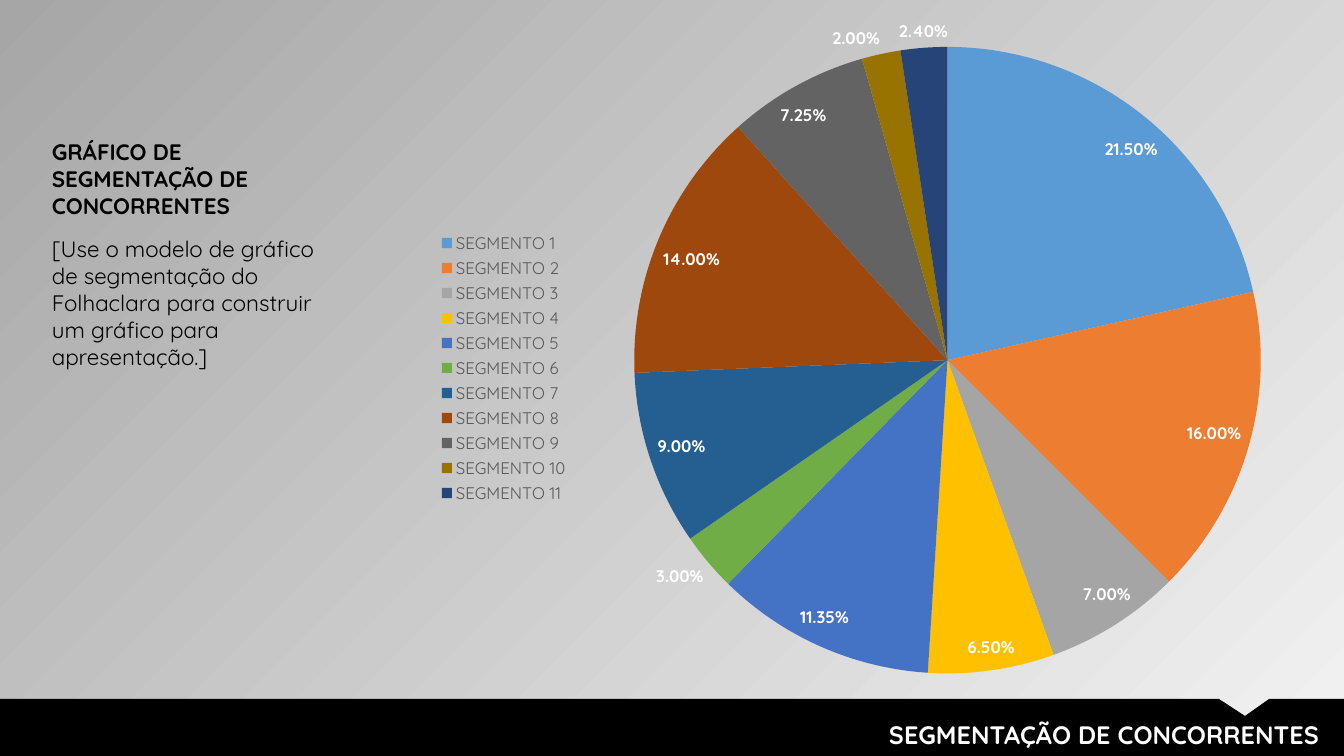
from lxml import etree
from pptx import Presentation
from pptx.chart.data import CategoryChartData
from pptx.dml.color import RGBColor
from pptx.enum.chart import XL_CHART_TYPE as ChartType, XL_LABEL_POSITION as LabelPos
from pptx.enum.chart import XL_LEGEND_POSITION as LegendPos
from pptx.enum.text import MSO_ANCHOR as Anchor, MSO_AUTO_SIZE as AutoSize, PP_ALIGN as Align
from pptx.oxml.ns import qn
from pptx.util import Pt

SLIDE_W, SLIDE_H = 1344, 756
EMU_PER_PX = 12192000 / SLIDE_W
FONT = "Quicksand"
COLORS = {
    "light": "F2F2F2", "mid": "A6A6A6", "black": "000000",
    "white": "FFFFFF", "legend": "595959",
}
SEGMENTS = [  # share, colour
    (0.215, "5B9BD5"), (0.16, "ED7D31"), (0.07, "A5A5A5"), (0.065, "FFC000"),
    (0.1135, "4472C4"), (0.03, "70AD47"), (0.09, "255E91"), (0.14, "9E480E"),
    (0.0725, "636363"), (0.02, "997300"), (0.024, "264478"),
]
PLOT_AREA = {"x": 0.244, "y": 0.065, "w": 0.749, "h": 0.849}


def px(length):
    return round(length * EMU_PER_PX)


def rgb(name):
    return RGBColor.from_string(COLORS[name])


def style_font(font, size, color, bold=False):
    font.name, font.size, font.bold = FONT, Pt(size), bold
    font.color.rgb = rgb(color)


def write(paragraph, text, *, size, color, bold=False, align=Align.LEFT, after=0):
    run = paragraph.add_run()
    run.text = text
    style_font(run.font, size, color, bold)
    paragraph.alignment = align
    paragraph.line_spacing = 1.0
    paragraph.space_before, paragraph.space_after = Pt(0), Pt(after)


def paint_background(slide):
    fill = slide.background.fill
    fill.gradient()
    fill.gradient_angle = 135
    for stop, name in zip(fill.gradient_stops, ("light", "mid")):
        stop.color.rgb = rgb(name)


def add_banner(slide, left, top, width, height):
    # Black band with a notch in its upper edge
    right, bottom = left + width, top + height
    outline = slide.shapes.build_freeform(left, top, scale=EMU_PER_PX)
    outline.add_line_segments([
        (right - 125, top), (right - 99, top + 17), (right - 75, top),
        (right, top), (right, bottom), (left, bottom),
    ])
    band = outline.convert_to_shape()
    band.shadow.inherit = False
    band.fill.solid()
    band.fill.fore_color.rgb = rgb("black")
    band.line.fill.background()

    # Slide title, brought in front of the band
    title = slide.shapes.title
    title.left, title.top = px(right - 698), px(top + 15)
    title.width, title.height = px(683), px(40)
    frame = title.text_frame
    frame.vertical_anchor, frame.auto_size = Anchor.TOP, AutoSize.NONE
    write(frame.paragraphs[0], "SEGMENTAÇÃO DE CONCORRENTES",
          size=18, color="white", bold=True, align=Align.RIGHT)
    slide.shapes._spTree.append(title._element)


def set_plot_area(chart, box):
    plot_area = chart._chartSpace.chart.plotArea
    for previous in plot_area.findall(qn("c:layout")):
        plot_area.remove(previous)
    layout = etree.Element(qn("c:layout"))
    manual = etree.SubElement(layout, qn("c:manualLayout"))
    settings = {"layoutTarget": "inner", "xMode": "edge", "yMode": "edge", **box}
    for tag, value in settings.items():
        etree.SubElement(manual, qn(f"c:{tag}")).set("val", str(value))
    plot_area.insert(0, layout)


def add_segment_chart(slide, left, top, width, height):
    shares = CategoryChartData(number_format="0.00%")
    shares.categories = [f"SEGMENTO {n}" for n in range(1, len(SEGMENTS) + 1)]
    shares.add_series("Series 1", [share for share, _ in SEGMENTS])
    chart = slide.shapes.add_chart(
        ChartType.PIE, px(left), px(top), px(width), px(height), shares).chart
    chart.has_title = False
    style_font(chart.font, 12, "black")
    set_plot_area(chart, PLOT_AREA)

    chart.has_legend = True
    chart.legend.position = LegendPos.LEFT
    chart.legend.include_in_layout = False
    style_font(chart.legend.font, 12, "legend")

    pie = chart.plots[0]
    pie.vary_by_categories = True
    for index, (_, color) in enumerate(SEGMENTS):
        slice_format = pie.series[0].points[index].format
        slice_format.fill.solid()
        slice_format.fill.fore_color.rgb = RGBColor.from_string(color)
        slice_format.line.fill.background()

    labels = pie.series[0].data_labels
    labels.show_value = True
    labels.show_percentage = False
    labels.number_format, labels.number_format_is_linked = "0.00%", False
    labels.position = LabelPos.BEST_FIT
    style_font(labels.font, 12, "white", bold=True)


def add_description(slide, left, top, width, height):
    frame = slide.shapes.add_textbox(px(left), px(top), px(width), px(height)).text_frame
    frame.word_wrap = True
    frame.vertical_anchor = Anchor.TOP
    frame.margin_top = px(3)
    write(frame.paragraphs[0], "GRÁFICO DE SEGMENTAÇÃO DE CONCORRENTES",
          size=16, color="black", bold=True, after=12)
    write(frame.add_paragraph(),
          "[Use o modelo de gráfico de segmentação do Folhaclara para construir "
          "um gráfico para apresentação.]",
          size=16, color="black", after=12)


def main():
    deck = Presentation()
    deck.slide_width, deck.slide_height = px(SLIDE_W), px(SLIDE_H)
    slide = deck.slides.add_slide(deck.slide_layouts.get_by_name("Title Only"))
    paint_background(slide)
    add_banner(slide, 0, 699, SLIDE_W, SLIDE_H - 699)
    add_segment_chart(slide, 428, -1, 840, 738)
    add_description(slide, 42, 135, 310, 279)
    deck.save("out.pptx")


if __name__ == "__main__":
    main()
